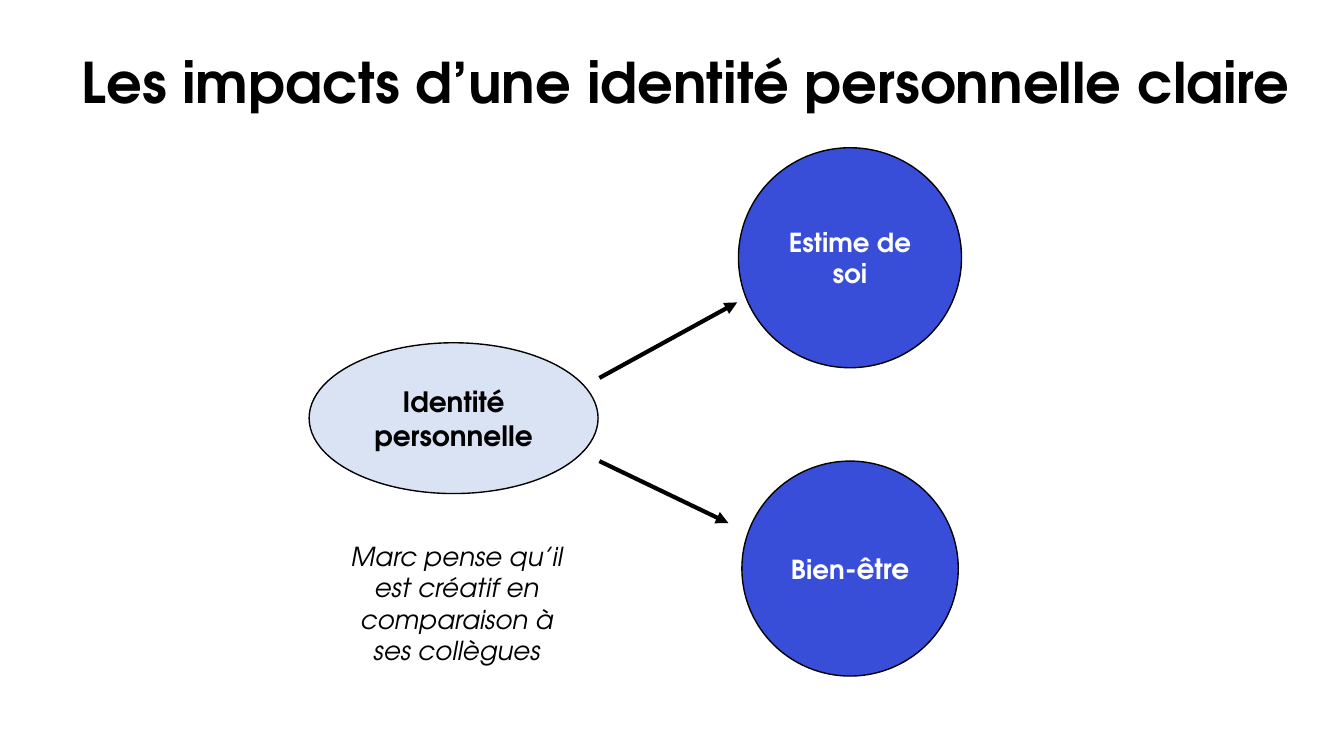
from lxml.etree import SubElement
from pptx import Presentation
from pptx.dml.color import RGBColor
from pptx.enum.shapes import MSO_CONNECTOR, MSO_SHAPE
from pptx.enum.text import MSO_ANCHOR, PP_ALIGN
from pptx.oxml.ns import qn
from pptx.util import Inches, Pt

WIDE = 10
HIGH = WIDE * 9 / 16
FONT = "TeX Gyre Adventor"
BLACK, WHITE, BLUE, PALE = "000000", "FFFFFF", "384DD8", "DAE3F3"


def color(code):
    return RGBColor.from_string(code)


def across(share):
    return Inches(WIDE * share / 100)


def down(share):
    return Inches(HIGH * share / 100)


def place(left, top, width, height):
    return across(left), down(top), across(width), down(height)


def write(shape, text, size=14, ink=BLACK, bold=False, slant=False,
          align=PP_ALIGN.CENTER):
    line = shape.text_frame.paragraphs[0]
    line.alignment = align
    run = line.add_run()
    run.text = text
    font = run.font
    font.name, font.size = FONT, Pt(size)
    font.bold, font.italic = bold, slant
    font.color.rgb = color(ink)


def frame(shape, anchor):
    body = shape.text_frame
    body.word_wrap = True
    body.vertical_anchor = anchor
    body.margin_left = body.margin_right = Inches(0.1)
    body.margin_top = body.margin_bottom = Inches(0.1)
    return shape


def label(slide, box, anchor=MSO_ANCHOR.TOP):
    return frame(slide.shapes.add_textbox(*place(*box)), anchor)


def oval(slide, box, fill):
    shape = slide.shapes.add_shape(MSO_SHAPE.OVAL, *place(*box))
    shape.shadow.inherit = False
    shape.fill.solid()
    shape.fill.fore_color.rgb = color(fill)
    shape.line.color.rgb = color(BLACK)
    shape.line.width = Pt(0.75)
    return frame(shape, MSO_ANCHOR.MIDDLE)


def arrow(slide, start, end):
    link = slide.shapes.add_connector(
        MSO_CONNECTOR.STRAIGHT, across(start[0]), down(start[1]),
        across(end[0]), down(end[1]))
    link.line.color.rgb = color(BLACK)
    link.line.width = Pt(2.25)
    props = link.element.spPr
    SubElement(props.find(qn("a:ln")), qn("a:tailEnd"), type="triangle")
    SubElement(props, qn("a:effectLst"))


def main():
    deck = Presentation()
    deck.slide_width, deck.slide_height = Inches(WIDE), Inches(HIGH)
    slide = deck.slides.add_slide(deck.slide_layouts[6])

    title = label(slide, (5.1, 7.29, 93.3, 6.76), MSO_ANCHOR.MIDDLE)
    write(title, "Les impacts d’une identité personnelle claire",
          size=30, bold=True, align=PP_ALIGN.LEFT)

    health = oval(slide, (55.2, 61, 16.1, 28.44), BLUE)
    write(health, "Bien", ink=WHITE, bold=True)
    write(health, "-être", size=15, ink=WHITE, bold=True)

    person = oval(slide, (23, 45.35, 21.5, 19.95), PALE)
    write(person, "Identité personnelle", size=15, bold=True)

    arrow(slide, (44.6, 61), (54.2, 69.2))

    esteem = oval(slide, (54.95, 19.55, 16.6, 29.1), BLUE)
    write(esteem, "Estime de soi", ink=WHITE, bold=True)

    arrow(slide, (44.6, 50), (54.85, 40))

    note = label(slide, (24.3, 69.7, 19.4, 20.3))
    write(note, "Marc pense qu’il est créatif en comparaison à ses collègues",
          slant=True)

    deck.save("out.pptx")


if __name__ == "__main__":
    main()
